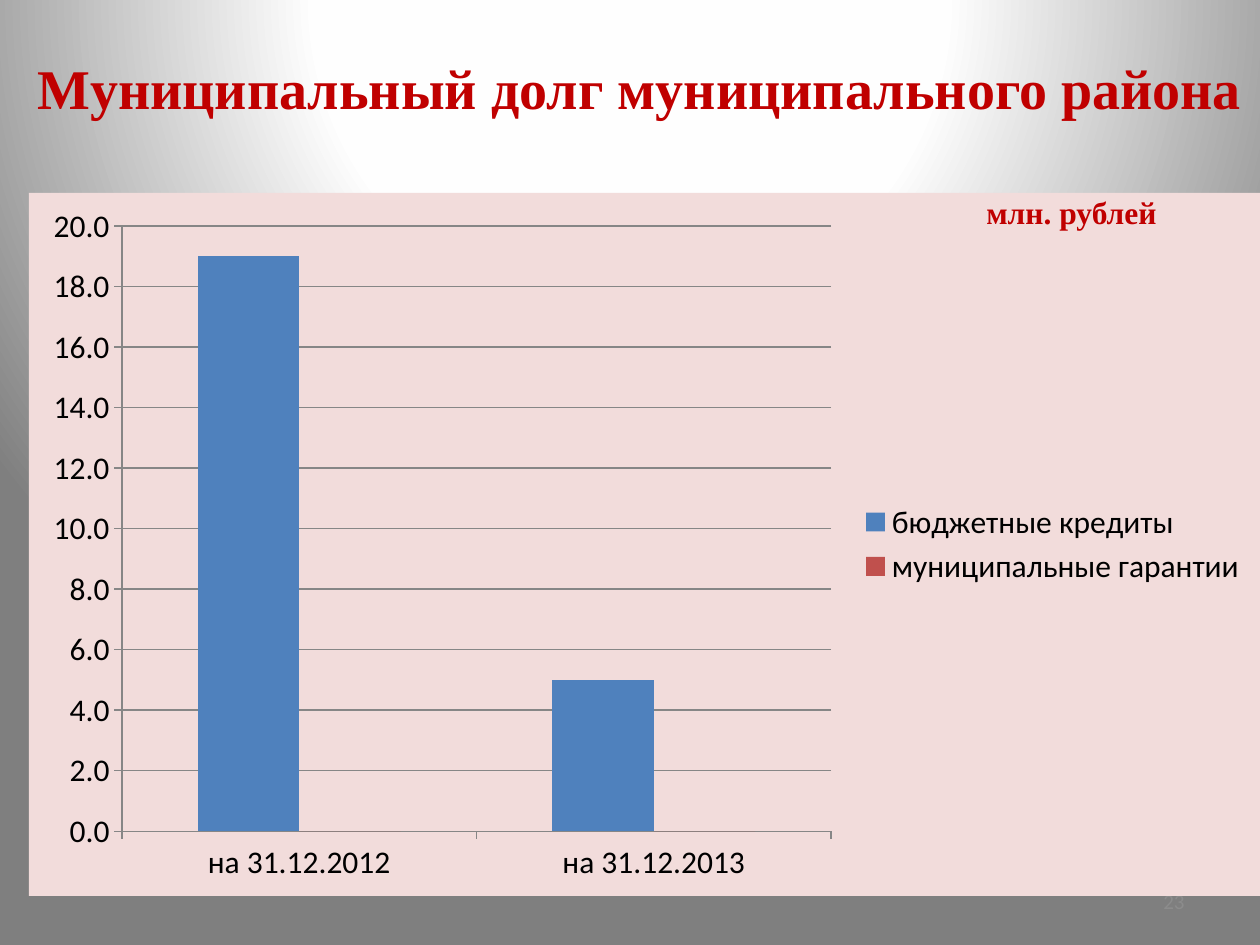
from pptx import Presentation
from pptx.chart.data import CategoryChartData
from pptx.dml.color import RGBColor
from pptx.enum.chart import XL_CHART_TYPE as ChartType, XL_LEGEND_POSITION as LegendPos
from pptx.enum.text import MSO_ANCHOR as Anchor, PP_ALIGN as Align
from pptx.oxml import parse_xml
from pptx.oxml.ns import nsdecls
from pptx.util import Inches, Pt


def rgb(color):
    return RGBColor.from_string(color)


def write(sp, text, size, font, color, bold, align, anchor):
    tf = sp.text_frame
    tf.word_wrap = True
    tf.vertical_anchor = anchor
    p = tf.paragraphs[0]
    p.alignment = align
    r = p.add_run()
    r.text = text
    r.font.size, r.font.name, r.font.bold = Pt(size), font, bold
    r.font.color.rgb = rgb(color)


prs = Presentation()
prs.slide_width, prs.slide_height = Inches(10), Inches(7.5)
s = prs.slides.add_slide(prs.slide_layouts[5])

# Circular gradient background
stops = "".join(
    f'<a:gs pos="{pos * 1000}"><a:srgbClr val="{color}"/></a:gs>'
    for pos, color in [(0, "FFFFFF"), (40, "FEFEFE"), (100, "7F7F7F")]
)
s.element.cSld.insert(0, parse_xml(
    f'<p:bg {nsdecls("p", "a")}><p:bgPr><a:gradFill rotWithShape="1"><a:gsLst>{stops}</a:gsLst>'
    '<a:path path="circle"><a:fillToRect l="50000" t="-80000" r="50000" b="180000"/></a:path>'
    '</a:gradFill><a:effectLst/></p:bgPr></p:bg>'
))

# Title
title = s.shapes.title
title.left, title.top = Inches(0.16), Inches(0.3)
title.width, title.height = Inches(9.84), Inches(0.79)
write(title, "Муниципальный долг муниципального района", 32, "Times New Roman",
      "C00000", True, Align.CENTER, Anchor.MIDDLE)

# Slide number
number = s.shapes.add_textbox(Inches(7.17), Inches(6.95), Inches(2.33), Inches(0.4))
write(number, "23", 12, "Calibri", "8C8C8C", False, Align.RIGHT, Anchor.MIDDLE)

# Debt chart
data = CategoryChartData(number_format="0.0")
data.categories = ["на 31.12.2012", "на 31.12.2013"]
data.add_series("бюджетные кредиты", [19, 5])
data.add_series("муниципальные гарантии", [0, 0])
chart = s.shapes.add_chart(ChartType.COLUMN_CLUSTERED, Inches(0.23), Inches(1.53),
                           Inches(9.77), Inches(5.58), data).chart
chart.has_title = False
chart.font.size, chart.font.name = Pt(18), "Calibri"
chart.font.color.rgb = rgb("000000")
chart.has_legend = True
chart.legend.position = LegendPos.RIGHT
chart.legend.include_in_layout = False

plot = chart.plots[0]
plot.gap_width, plot.overlap, plot.vary_by_categories = 150, 0, False
for series, color in zip(plot.series, ["4F81BD", "C0504D"]):
    series.format.fill.solid()
    series.format.fill.fore_color.rgb = rgb(color)

val_axis = chart.value_axis
val_axis.minimum_scale, val_axis.maximum_scale, val_axis.major_unit = 0, 20, 2
val_axis.tick_labels.number_format = "0.0"
val_axis.tick_labels.number_format_is_linked = False
val_axis.has_major_gridlines = True
for line in (val_axis.format.line, chart.category_axis.format.line,
             val_axis.major_gridlines.format.line):
    line.color.rgb = rgb("868686")
    line.width = Pt(0.75)

# Chart area fill
chart.element.chart.addnext(parse_xml(
    f'<c:spPr {nsdecls("c", "a")}><a:solidFill><a:srgbClr val="F2DCDB"/></a:solidFill>'
    '<a:ln><a:noFill/></a:ln></c:spPr>'
))

# Unit label
unit = s.shapes.add_textbox(Inches(7.73), Inches(1.48), Inches(2.27), Inches(0.4))
write(unit, "млн. рублей", 18, "Times New Roman", "C00000", True, Align.LEFT, Anchor.TOP)

prs.save("out.pptx")
